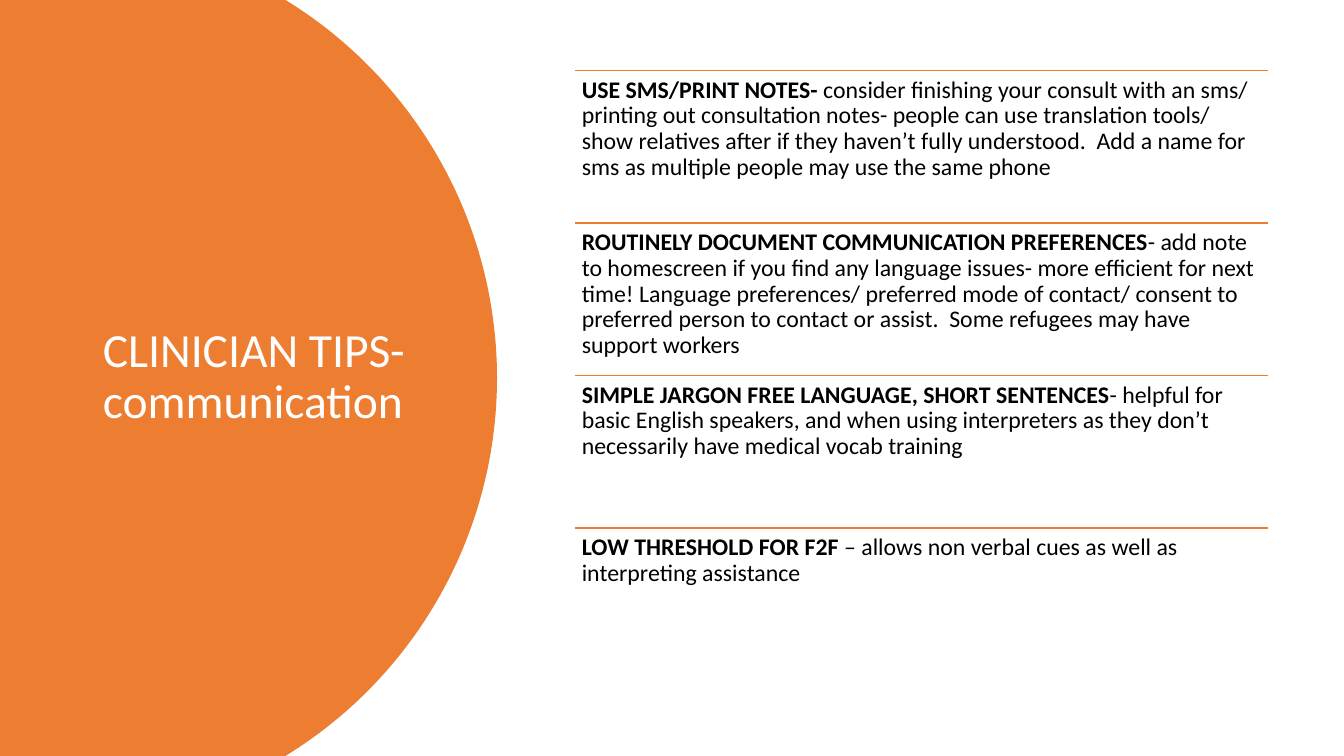
from math import asin, cos, sin

from lxml import etree
from pptx import Presentation
from pptx.dml.color import RGBColor
from pptx.enum.shapes import MSO_CONNECTOR
from pptx.enum.text import MSO_ANCHOR, MSO_AUTO_SIZE, PP_ALIGN
from pptx.oxml.ns import qn
from pptx.util import Inches, Pt

STRAIGHT = MSO_CONNECTOR.STRAIGHT
TOP, MIDDLE = MSO_ANCHOR.TOP, MSO_ANCHOR.MIDDLE
LEFT = PP_ALIGN.LEFT
NO_FIT = MSO_AUTO_SIZE.NONE

COLORS = {"accent": "ED7D31", "title": "FFFFFF", "text": "000000"}
FONT = "Calibri"
SLIDE_W, SLIDE_H = 13.33, 7.5

TITLE = "CLINICIAN TIPS- communication"
TIPS = [
    ("USE SMS/PRINT NOTES-",
     " consider finishing your consult with an sms/ printing out consultation "
     "notes- people can use translation tools/ show relatives after if they "
     "haven’t fully understood.  Add a name for sms as multiple people may use "
     "the same phone"),
    ("ROUTINELY DOCUMENT COMMUNICATION PREFERENCES",
     "- add note to homescreen if you find any language issues- more efficient "
     "for next time! Language preferences/ preferred mode of contact/ consent to "
     "preferred person to contact or assist.  Some refugees may have support "
     "workers"),
    ("SIMPLE JARGON FREE LANGUAGE, SHORT SENTENCES",
     "- helpful for basic English speakers, and when using interpreters as they "
     "don’t necessarily have medical vocab training"),
    ("LOW THRESHOLD FOR F2F",
     " – allows non verbal cues as well as interpreting assistance"),
]


def rgb(name):
    return RGBColor.from_string(COLORS[name])


def add_run(p, text, size, color, bold=False):
    r = p.add_run()
    r.text = text
    r.font.name = FONT
    r.font.size = Pt(size)
    r.font.bold = bold
    r.font.color.rgb = rgb(color)


def format_frame(tf, anchor, inset_x, inset_y):
    tf.word_wrap = True
    tf.auto_size = NO_FIT
    tf.vertical_anchor = anchor
    tf.margin_left = tf.margin_right = Inches(inset_x)
    tf.margin_top = tf.margin_bottom = Inches(inset_y)
    p = tf.paragraphs[0]
    p.alignment = LEFT
    p.line_spacing = 0.9
    p.space_before = Pt(0)
    return p


def add_title_panel(s, x, y, w, h, radius=4.4, steps=120):
    # Panel whose right edge is a circular arc
    cx, cy = x + w - radius, y + h / 2
    half_angle = asin(h / 2 / radius)
    angles = [half_angle * (2 * i / steps - 1) for i in range(steps + 1)]
    arc = [(Inches(cx + radius * cos(a)), Inches(cy + radius * sin(a)))
           for a in angles]
    builder = s.shapes.build_freeform(Inches(x), Inches(y))
    builder.add_line_segments(arc + [(Inches(x), Inches(y + h))], close=True)
    panel = builder.convert_to_shape()
    panel.shadow.inherit = False
    panel.fill.solid()
    panel.fill.fore_color.rgb = rgb("accent")
    panel.line.fill.background()

    # Title in front of the panel
    title = s.shapes.title
    title._element.addprevious(panel._element)
    title.left, title.top = Inches(x + 0.92), Inches(y + 0.7)
    title.width, title.height = Inches(3.23), Inches(6.09)
    p = format_frame(title.text_frame, MIDDLE, 0.1, 0.05)
    add_run(p, TITLE, 34, "title")


def add_tips(s, x, y, w, h):
    row_h = h / len(TIPS)
    for i, (lead, detail) in enumerate(TIPS):
        top = Inches(y + i * row_h)
        # Rule above the tip
        rule = s.shapes.add_connector(STRAIGHT, Inches(x), top, Inches(x + w), top)
        rule.line.color.rgb = rgb("accent")
        rule.line.width = Pt(1)
        etree.SubElement(rule._element.spPr, qn("a:effectLst"))
        # Tip text
        box = s.shapes.add_textbox(Inches(x), top, Inches(w), Inches(row_h))
        p = format_frame(box.text_frame, TOP, 0.07, 0.07)
        add_run(p, lead, 17, "text", bold=True)
        add_run(p, detail, 17, "text")


def main():
    prs = Presentation()
    prs.slide_width, prs.slide_height = Inches(SLIDE_W), Inches(SLIDE_H)
    s = prs.slides.add_slide(prs.slide_layouts[5])
    add_title_panel(s, 0, 0, 4.93, SLIDE_H)
    add_tips(s, 5.7, 0.7, 6.88, 6.05)
    prs.save("out.pptx")


if __name__ == "__main__":
    main()
